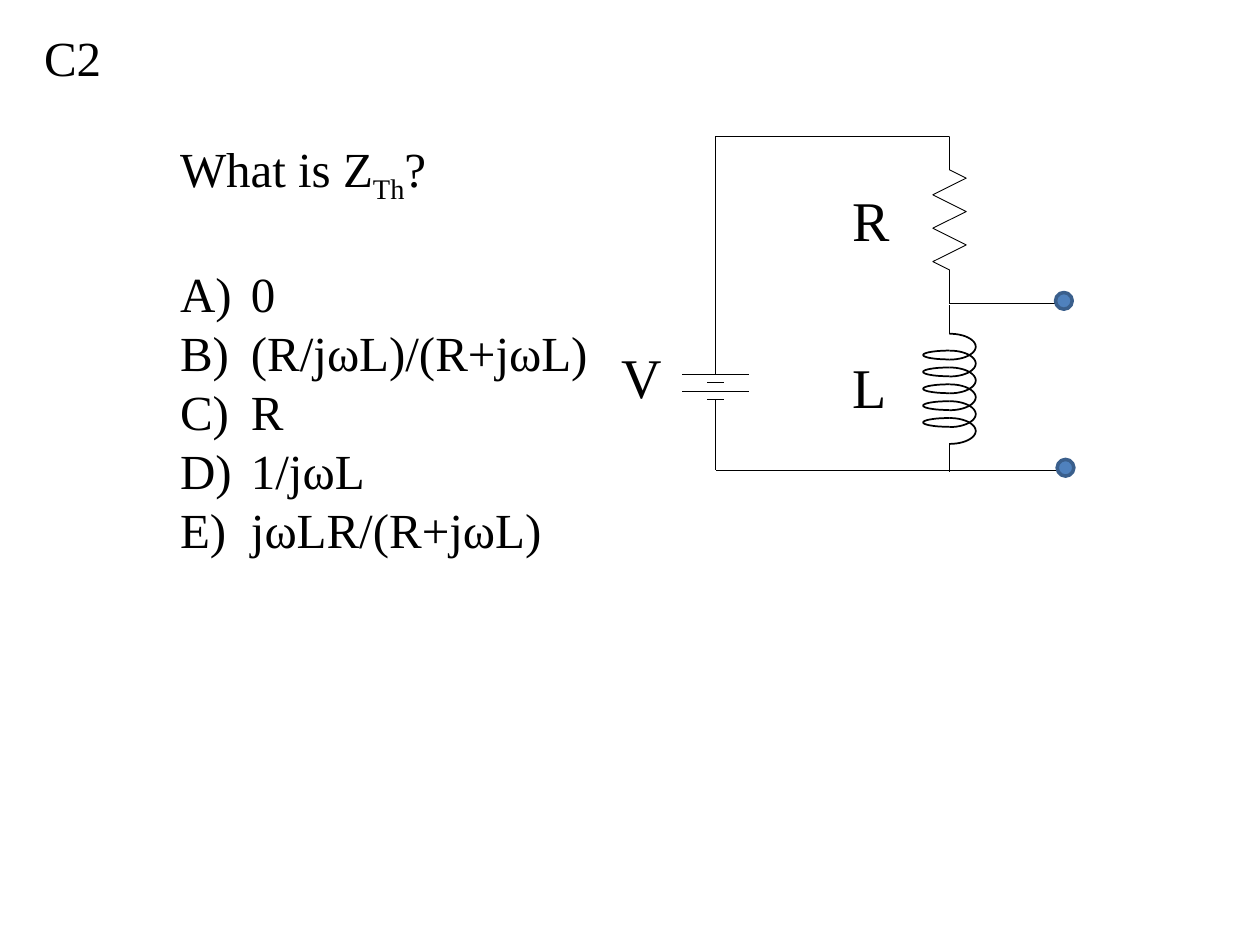
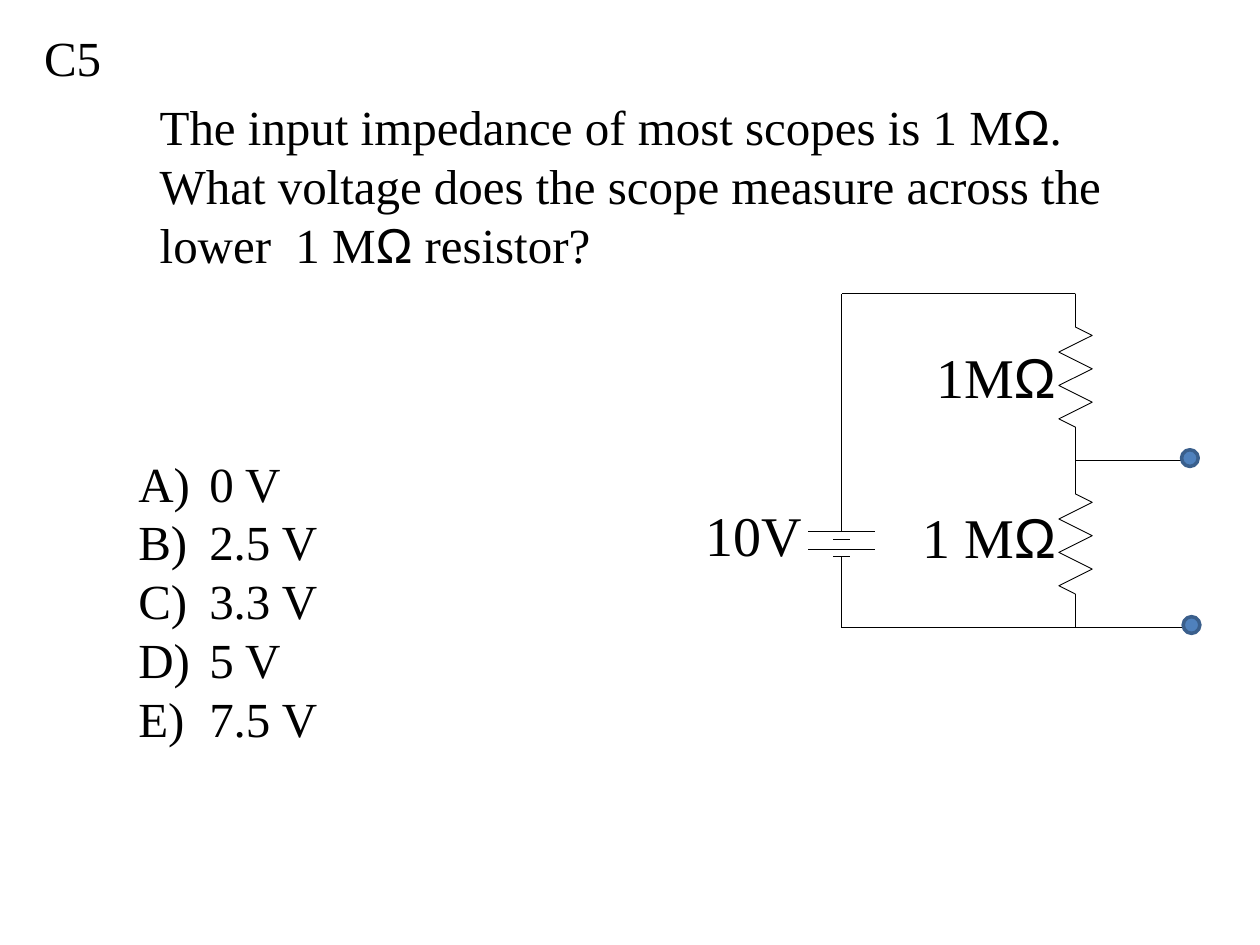
import math

import pptx
import pptx.dml.color
import pptx.enum.shapes
import pptx.enum.text
import pptx.oxml.ns
import pptx.util
from lxml import etree

Cm = pptx.util.Cm
Pt = pptx.util.Pt
RGBColor = pptx.dml.color.RGBColor
qn = pptx.oxml.ns.qn

BLACK = RGBColor(0x00, 0x00, 0x00)
TERMINAL_FILL = RGBColor(0x4F, 0x81, 0xBD)
TERMINAL_EDGE = RGBColor(0x3A, 0x5F, 0x8C)

SERIF, SANS = "Times New Roman", "Arial"
BODY_SIZE, LABEL_SIZE = 28, 32
BLANK_LINE = 33.5
INDENT = 1.43
GRID = 6.73 / 40
BRANCH, MIDDLE, BOTTOM, TERMINAL = 28, 20, 40, 42


class CircuitQuiz:
    """Draws quiz text and circuit parts on the current page; circuit parts use grid steps from the origin."""

    def __init__(self):
        self.deck = pptx.Presentation()
        self.deck.slide_width = Cm(25.4)
        self.deck.slide_height = Cm(19.05)
        self.page = None
        self.origin = (0, 0)

    def new_page(self, code, origin):
        self.page = self.deck.slides.add_slide(self.deck.slide_layouts[6])
        self.origin = origin
        self.text(0.64, 0.43, 1.68, 1.45, [(code,)], wrap=False)

    def text(self, left, top, width, height, runs, size=BODY_SIZE, wrap=True):
        box = self.page.shapes.add_textbox(Cm(left), Cm(top), Cm(width), Cm(height))
        frame = box.text_frame
        frame.word_wrap = wrap
        frame.auto_size = pptx.enum.text.MSO_AUTO_SIZE.SHAPE_TO_FIT_TEXT
        self.add_runs(frame.paragraphs[0], runs, size)
        return frame

    def add_runs(self, para, runs, size=BODY_SIZE):
        for words, *style in runs:
            span = para.add_run()
            span.text = words
            span.font.size = Pt(size)
            span.font.name = SANS if "sans" in style else SERIF
            span.font.color.rgb = BLACK
            if "subscript" in style:
                span.font._element.set("baseline", "-25000")

    def label(self, left, top, width, runs):
        self.text(left, top, width, 1.63, runs, LABEL_SIZE, wrap=False)

    def answers(self, frame, choices):
        for number, choice in enumerate(choices):
            para = frame.paragraphs[0] if not frame.text else frame.add_paragraph()
            if number == 0 and frame.text:
                para.space_before = Pt(BLANK_LINE)
            self.add_runs(para, [(choice,)])
            properties = para._p.get_or_add_pPr()
            properties.set("marL", str(Cm(INDENT)))
            properties.set("indent", str(-Cm(INDENT)))
            bullet = etree.SubElement(properties, qn("a:buAutoNum"))
            bullet.set("type", "alphaUcParenR")

    def spot(self, x, y):
        left, top = self.origin
        return Cm(left + x * GRID), Cm(top + y * GRID)

    def wire(self, start, end, weight=0.75):
        line = self.page.shapes.add_connector(
            pptx.enum.shapes.MSO_CONNECTOR.STRAIGHT, *self.spot(*start), *self.spot(*end))
        line.line.color.rgb = BLACK
        line.line.width = Pt(weight)
        etree.SubElement(line._element.spPr, qn("a:effectLst"))

    def outline(self, points, weight):
        spots = [self.spot(*point) for point in points]
        builder = self.page.shapes.build_freeform(*spots[0])
        builder.add_line_segments(spots[1:], close=False)
        shape = builder.convert_to_shape()
        shape.shadow.inherit = False
        shape.fill.background()
        shape.line.color.rgb = BLACK
        shape.line.width = Pt(weight)

    def resistor(self, top):
        zigzag = [(0, 0), (0, 4), (2, 5), (-2, 7), (2, 9), (-2, 11),
                  (2, 13), (-2, 15), (0, 16), (0, 20)]
        self.outline([(BRANCH + x, top + y) for x, y in zigzag], 0.5)

    def half_turn(self, middle, reach, rise):
        angles = [math.pi * (step / 24 - 0.5) for step in range(25)]
        self.outline([(BRANCH + reach * math.cos(angle), middle + rise * math.sin(angle))
                      for angle in angles], 1)

    def inductor(self, top):
        self.wire((BRANCH, top + 3.65), (BRANCH, top + 0.2), 1)
        self.wire((BRANCH, top + 20.2), (BRANCH, top + 16.75), 1)
        for turn in range(6):
            self.half_turn(top + 5.2 + 2.02 * turn, 3.15, 1.55)
        for turn in range(5):
            self.half_turn(top + 6.2 + 2.02 * turn, -3.15, 0.53)

    def battery(self):
        self.wire((0, 31.5), (0, BOTTOM), 0.5)
        for half, y in [(4, 28.5), (1, 29.5), (4, 30.6), (1, 31.5)]:
            self.wire((-half, y), (half, y), 0.5)
        self.wire((0, MIDDLE), (0, 28.5), 0.5)

    def terminal(self, x, y):
        dot = self.page.shapes.add_shape(
            pptx.enum.shapes.MSO_SHAPE.OVAL, *self.spot(x - 1, y - 1), Cm(2 * GRID), Cm(2 * GRID))
        dot.shadow.inherit = False
        dot.fill.solid()
        dot.fill.fore_color.rgb = TERMINAL_FILL
        dot.line.color.rgb = TERMINAL_EDGE
        dot.line.width = Pt(2)

    def circuit(self, lower_part):
        self.resistor(0)
        self.battery()
        for start, end in [((0, 26), (0, 0)), ((0, 0), (BRANCH, 0)),
                           ((0, BOTTOM), (BRANCH, BOTTOM)),
                           ((TERMINAL, BOTTOM), (24, BOTTOM)),
                           ((TERMINAL, MIDDLE), (BRANCH, MIDDLE))]:
            self.wire(start, end)
        self.terminal(41.7, 19.7)
        self.terminal(41.9, 39.7)
        lower_part(MIDDLE)


def main():
    quiz = CircuitQuiz()

    quiz.new_page("C2", (14.43, 2.75))
    question = quiz.text(3.38, 2.66, 11.43, 9.4,
                         [("What is Z",), ("Th", "subscript"), ("?",)])
    quiz.answers(question, ["0", "(R/jωL)/(R+jωL)", "R", "1/jωL", "jωLR/(R+jωL)"])
    quiz.label(12.27, 6.78, 1.35, [("V",)])
    quiz.label(16.94, 3.61, 1.27, [("R",)])
    quiz.label(16.94, 6.99, 1.22, [("L",)])
    quiz.circuit(quiz.inductor)

    quiz.new_page("C5", (16.97, 5.92))
    choices = quiz.text(2.54, 9.01, 11.86, 7.02, [])
    quiz.answers(choices, ["0 V", "2.5 V", "3.3 V", "5 V", "7.5 V"])
    quiz.label(13.97, 9.96, 2.49, [("10V",)])
    quiz.label(18.62, 6.78, 2.97, [("1M",), ("Ω", "sans")])
    quiz.circuit(quiz.resistor)
    quiz.label(18.34, 10.01, 3.25, [("1 M",), ("Ω", "sans")])
    quiz.text(2.97, 1.82, 20.96, 3.87, [
        ("The input impedance of most scopes is 1 M",), ("Ω", "sans"),
        (". What voltage does the scope measure across the lower  1 M",), ("Ω", "sans"),
        (" resistor?",)])

    quiz.deck.save("out.pptx")


if __name__ == "__main__":
    main()
